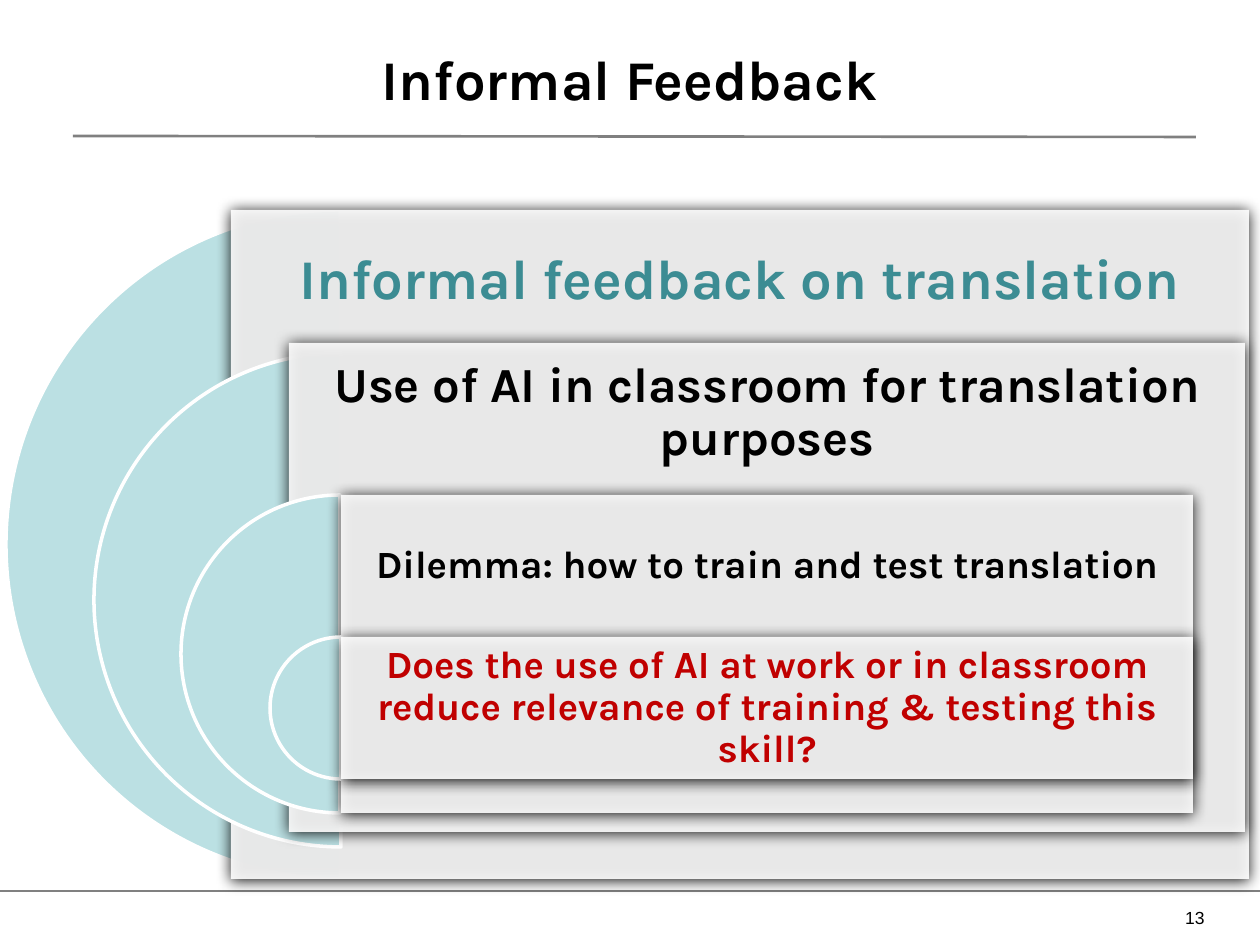
from lxml.etree import SubElement
from pptx import Presentation
from pptx.dml.color import RGBColor
from pptx.enum.shapes import MSO_CONNECTOR, MSO_SHAPE
from pptx.enum.text import MSO_ANCHOR as ANCHOR, MSO_AUTO_SIZE, PP_ALIGN as ALIGN
from pptx.oxml.ns import qn
from pptx.util import Pt

PX = 914400 / 126
LEVELS = [
    ((6, 210, 669), (231, 210, 1018, 669), 142, 16,
     "Informal feedback on translation", 32, "3C8C93"),
    ((94, 353, 494), (289, 343, 956, 489), 141, 15,
     "Use of AI in classroom for translation purposes", 28, "000000"),
    ((181, 495, 318), (341, 495, 852, 318), 142, 11,
     "Dilemma: how to train and test translation", 22, "000000"),
    ((270, 637, 142), (341, 637, 852, 142), 142, 11,
     "Does the use of AI at work or in classroom reduce relevance of training & testing this skill?",
     22, "C00000"),
]


def px(*lengths):
    return [round(length * PX) for length in lengths]


def color(value):
    return RGBColor.from_string(value)


def write(frame, words, size, ink, align, font="Karla", bold=True):
    frame.word_wrap = True
    frame.auto_size = MSO_AUTO_SIZE.NONE
    paragraph = frame.paragraphs[0]
    paragraph.alignment = align
    run = paragraph.add_run()
    run.text = words
    run.font.size = Pt(size)
    run.font.name = font
    run.font.bold = bold
    run.font.color.rgb = color(ink)
    return paragraph


def add_title(slide, words):
    title = slide.shapes.title
    title.left, title.top, title.width, title.height = px(63, 0, 1134, 157)
    title.text_frame.vertical_anchor = ANCHOR.MIDDLE
    write(title.text_frame, words, 32, "000000", ALIGN.CENTER)


def add_rule(slide, ends, weight):
    rule = slide.shapes.add_connector(MSO_CONNECTOR.STRAIGHT, *px(*ends))
    rule.line.color.rgb = color("808080")
    rule.line.width = Pt(weight)
    SubElement(rule._element.spPr, qn("a:effectLst"))


def add_half_disc(slide, left, top, diameter):
    disc = slide.shapes.add_shape(MSO_SHAPE.PIE, *px(left, top, diameter, diameter))
    disc.adjustments[0] = 54
    disc.adjustments[1] = 162
    disc.shadow.inherit = False
    disc.fill.solid()
    disc.fill.fore_color.rgb = color("BBE0E3")
    disc.line.color.rgb = color("FFFFFF")
    disc.line.width = Pt(2)


def add_panel(slide, box):
    panel = slide.shapes.add_shape(MSO_SHAPE.RECTANGLE, *px(*box))
    panel.shadow.inherit = False
    panel.fill.solid()
    panel.fill.fore_color.rgb = color("FFFFFF")
    panel.line.fill.background()
    properties = panel._element.spPr
    tint = properties.find(qn("a:solidFill")).find(qn("a:srgbClr"))
    SubElement(tint, qn("a:alpha"), val="90000")
    shadow = SubElement(
        properties.find(qn("a:effectLst")), qn("a:outerShdw"),
        blurRad=str(Pt(8.5)), dist=str(Pt(1)), dir="5400000",
        algn="ctr", rotWithShape="0")
    SubElement(shadow, qn("a:srgbClr"), val="000000")


def add_caption(slide, box, inset, words, size, ink):
    frame = slide.shapes.add_textbox(*px(*box)).text_frame
    frame.vertical_anchor = ANCHOR.MIDDLE
    margin = px(inset)[0]
    frame.margin_left = frame.margin_right = margin
    frame.margin_top = frame.margin_bottom = margin
    write(frame, words, size, ink, ALIGN.CENTER).line_spacing = 0.9


def add_page_number(slide, number):
    frame = slide.shapes.add_textbox(*px(955, 901, 262, 44)).text_frame
    write(frame, number, 10, "000000", ALIGN.RIGHT, "Arial", False)


def main():
    deck = Presentation()
    deck.slide_width, deck.slide_height = px(1260, 945)
    slide = deck.slides.add_slide(deck.slide_layouts[5])
    add_title(slide, "Informal Feedback")
    add_rule(slide, (73, 136, 1196, 137), 1.5)
    add_rule(slide, (0, 891, 1260, 891), 0.75)
    for disc, panel, band, inset, words, size, ink in LEVELS:
        add_half_disc(slide, *disc)
        add_panel(slide, panel)
        add_caption(slide, (*panel[:3], band), inset, words, size, ink)
    add_page_number(slide, "13")
    deck.save("out.pptx")


if __name__ == "__main__":
    main()
